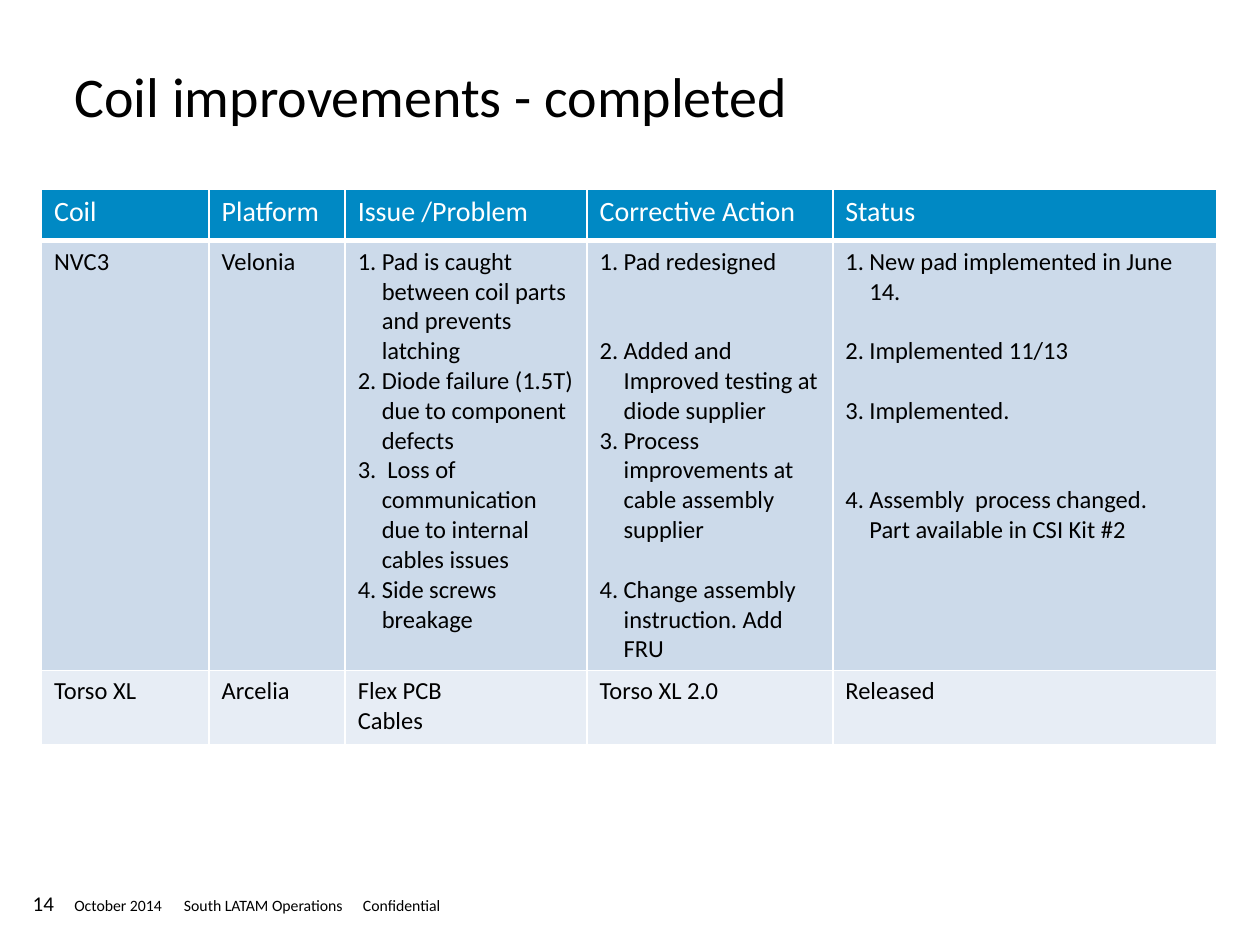
from dataclasses import dataclass

from lxml import etree
from pptx import Presentation
from pptx.dml.color import RGBColor
from pptx.oxml import ns
from pptx.util import Inches, Pt


@dataclass(frozen=True)
class Theme:
    font: str = "Calibri"
    ink: str = "000000"
    white: str = "FFFFFF"
    header: str = "0089C4"
    bands: tuple = ("CCDAEA", "E7EDF5")
    title_size: int = 32
    header_size: int = 16
    body_size: int = 14
    number_size: int = 12
    footer_size: int = 9


THEME = Theme()
COLUMN_WIDTHS = (1.33, 1.08, 1.92, 1.95, 3.05)
ROW_HEIGHTS = (0.41, 3.41, 0.59)
HEADINGS = ("Coil", "Platform", "Issue /Problem", "Corrective Action", "Status")
ISSUES = (
    "Pad is caught between coil parts and prevents latching",
    "Diode failure (1.5T) due to component defects",
    " Loss of communication due to internal cables issues",
    "Side screws breakage",
)
ACTIONS = (
    "Pad redesigned\n\n",
    "Added and Improved testing at diode supplier",
    "Process improvements at cable assembly supplier\n",
    "Change assembly instruction. Add FRU",
)
STATUSES = (
    "New pad implemented in June 14.\n",
    "Implemented 11/13\n",
    "Implemented.\n\n",
    "Assembly  process changed.\nPart available in CSI Kit #2",
)
COIL_ROWS = (
    (("NVC3",), ("Velonia",), ISSUES, ACTIONS, STATUSES),
    (("Torso XL",), ("Arcelia",), ("Flex PCB", "Cables"), ("Torso XL 2.0",), ("Released",)),
)


def style_paragraph(para, size, color):
    para.font.name = THEME.font
    para.font.size = Pt(size)
    para.font.color.rgb = RGBColor.from_string(color)


def add_number(para):
    properties = para._p.get_or_add_pPr()
    properties.set("marL", str(Inches(0.19)))
    properties.set("indent", str(-Inches(0.19)))
    etree.SubElement(properties, ns.qn("a:buFont"), typeface="+mj-lt")
    etree.SubElement(properties, ns.qn("a:buAutoNum"), type="arabicPeriod")


def add_tabs(para, stops):
    tabs = etree.SubElement(para._p.get_or_add_pPr(), ns.qn("a:tabLst"))
    for stop in stops:
        etree.SubElement(tabs, ns.qn("a:tab"), pos=str(Inches(stop)), algn="l")


def add_label(page, words, left, top, width, height, size, stops=()):
    box = page.shapes.add_textbox(Inches(left), Inches(top), Inches(width), Inches(height))
    frame = box.text_frame
    frame.word_wrap = True
    frame.margin_left = frame.margin_right = frame.margin_top = frame.margin_bottom = 0
    para = frame.paragraphs[0]
    para.text = words
    if stops:
        add_tabs(para, stops)
    style_paragraph(para, size, THEME.ink)


def add_borders(cell, bottom):
    properties = cell._tc.get_or_add_tcPr()
    for side, width in (("L", 1), ("R", 1), ("T", 1), ("B", bottom)):
        line = etree.SubElement(properties, ns.qn(f"a:ln{side}"), w=str(Pt(width)))
        fill = etree.SubElement(line, ns.qn("a:solidFill"))
        etree.SubElement(fill, ns.qn("a:srgbClr"), val=THEME.white)


def fill_cell(cell, lines, size, color, background, numbered=False, bottom=1):
    add_borders(cell, bottom)
    cell.fill.solid()
    cell.fill.fore_color.rgb = RGBColor.from_string(background)
    frame = cell.text_frame
    for index, line in enumerate(lines):
        para = frame.paragraphs[0] if index == 0 else frame.add_paragraph()
        para.text = line
        if numbered:
            add_number(para)
        style_paragraph(para, size, color)


def add_coil_table(page):
    table = page.shapes.add_table(
        len(ROW_HEIGHTS), len(COLUMN_WIDTHS), Inches(0.33), Inches(1.5),
        Inches(sum(COLUMN_WIDTHS)), Inches(sum(ROW_HEIGHTS)),
    ).table
    for column, width in zip(table.columns, COLUMN_WIDTHS):
        column.width = Inches(width)
    for row, height in zip(table.rows, ROW_HEIGHTS):
        row.height = Inches(height)
    table.first_row = table.horz_banding = False
    for column, heading in enumerate(HEADINGS):
        fill_cell(table.cell(0, column), (heading,), THEME.header_size, THEME.white,
                  THEME.header, bottom=3)
    for row, (contents, band) in enumerate(zip(COIL_ROWS, THEME.bands), start=1):
        for column, lines in enumerate(contents):
            fill_cell(table.cell(row, column), lines, THEME.body_size, THEME.ink, band,
                      numbered=len(lines) == len(ISSUES))


def main():
    deck = Presentation()
    deck.slide_width, deck.slide_height = Inches(10), Inches(7.5)
    page = deck.slides.add_slide(deck.slide_layouts[6])
    add_label(page, "14", 0.26, 7.07, 0.55, 0.2, THEME.number_size)
    add_label(page, "October 2014\tSouth LATAM Operations\tConfidential",
              0.59, 7.11, 4.96, 0.15, THEME.footer_size, stops=(0.87, 2.29))
    add_label(page, "Coil improvements - completed", 0.59, 0.49, 8.82, 1.1, THEME.title_size)
    add_coil_table(page)
    deck.save("out.pptx")


if __name__ == "__main__":
    main()
